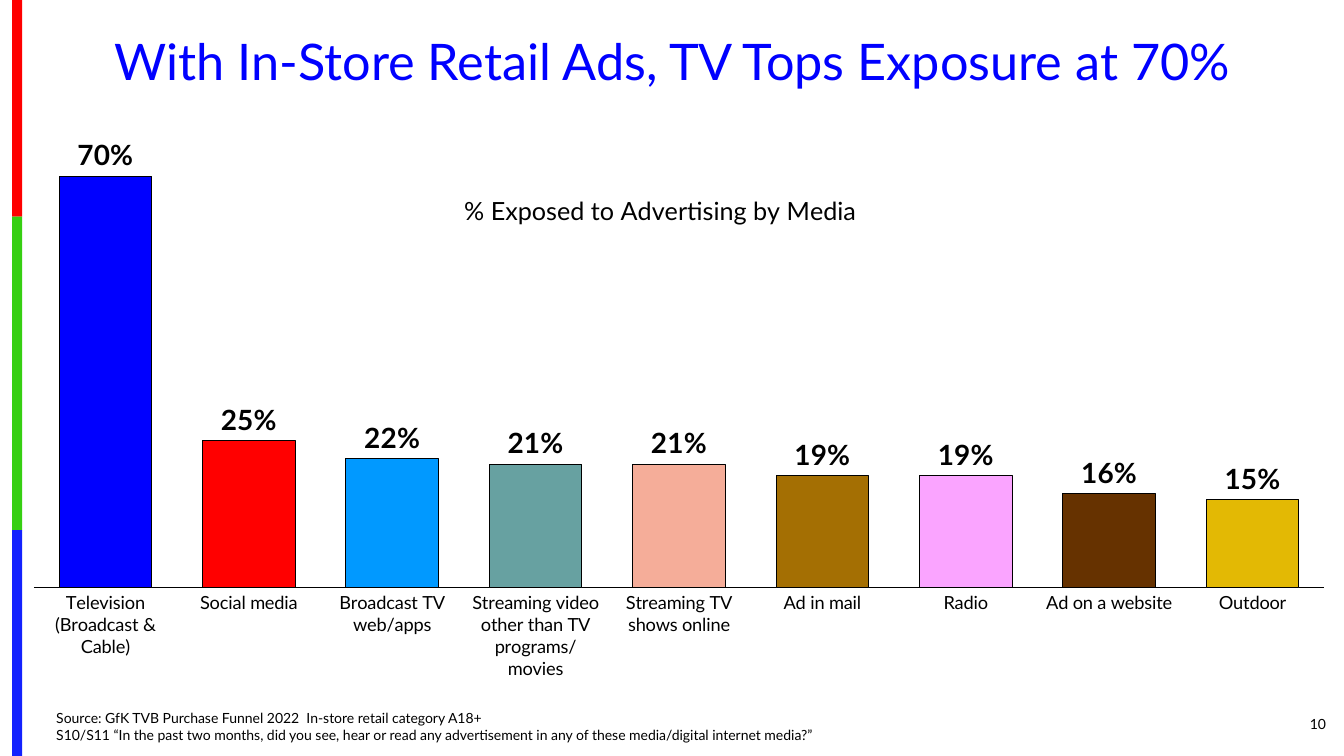
from lxml.etree import SubElement
from pptx import Presentation
from pptx.chart.data import CategoryChartData as Data
from pptx.dml.color import RGBColor as RGB
from pptx.enum.chart import XL_CHART_TYPE as Kind, XL_LABEL_POSITION as Pos, XL_TICK_MARK as Tick
from pptx.enum.shapes import MSO_SHAPE as Shape
from pptx.enum.text import MSO_ANCHOR as Anchor, PP_ALIGN as Align
from pptx.oxml import parse_xml
from pptx.oxml.ns import nsdecls, qn
from pptx.util import Inches, Pt

W, H = 13.33, 7.5
FONT = "Lato"
INK = {"text": "000000", "title": "0000FF", "red": "FE0000", "green": "36CF12", "blue": "1322FE"}
STRIPE = [("red", 2.15), ("green", 3.11), ("blue", 2.24)]
MEDIA = [
    ("Television (Broadcast & Cable)", 0.70, "0000FF"),
    ("Social media", 0.25, "FF0000"),
    ("Broadcast TV web/apps", 0.22, "0199FF"),
    ("Streaming video other than TV programs/movies", 0.21, "67A1A1"),
    ("Streaming TV shows online", 0.21, "F5AD99"),
    ("Ad in mail", 0.19, "A46F03"),
    ("Radio", 0.19, "FAA4FF"),
    ("Ad on a website", 0.16, "663200"),
    ("Outdoor", 0.15, "E3B904"),
]
SOURCE = (
    "Source: GfK TVB Purchase Funnel 2022  In-store retail category A18+\v"
    "S10/S11 “In the past two months, did you see, hear or read any "
    "advertisement in any of these media/digital internet media?”"
)


def style(font, size, color=INK["text"], bold=False):
    """Set the face, size, colour and weight of a font."""
    font.name, font.size, font.bold = FONT, Pt(size), bold
    font.color.rgb = RGB.from_string(color)


def write(slide, box, text, size=10, color=INK["text"], align=Align.LEFT, anchor=Anchor.MIDDLE, space=1.0):
    """Add one paragraph of text in a box."""
    frame = slide.shapes.add_textbox(*map(Inches, box)).text_frame
    frame.word_wrap, frame.vertical_anchor = True, anchor
    para = frame.paragraphs[0]
    para.text, para.alignment, para.line_spacing = text, align, space
    for run in para.runs:
        style(run.font, size, color)


def outline(line):
    """Give a line the thin black pen."""
    line.color.rgb = RGB.from_string(INK["text"])
    line.width = Pt(0.75)


def place(node, index, **share):
    """Fix a chart part at shares of the chart's size."""
    for old in node.findall(qn("c:layout")):
        node.remove(old)
    layout = parse_xml(f"<c:layout {nsdecls('c')}/>")
    manual = SubElement(layout, qn("c:manualLayout"))
    if "w" in share:
        SubElement(manual, qn("c:layoutTarget"), val="inner")
    for side in "xy":
        SubElement(manual, qn(f"c:{side}Mode"), val="edge")
    for name, val in share.items():
        SubElement(manual, qn(f"c:{name}"), val=str(val))
    node.insert(index, layout)


def stripe(slide, left, width):
    """Stack the colour bands down the left edge."""
    top = 0
    for name, high in STRIPE:
        band = slide.shapes.add_shape(Shape.RECTANGLE, *map(Inches, (left, top, width, high)))
        band.shadow.inherit = False
        band.fill.solid()
        band.fill.fore_color.rgb = RGB.from_string(INK[name])
        band.line.fill.background()
        top += high


def columns(slide, box):
    """Add the column chart of exposure by media."""
    names, vals, colors = zip(*MEDIA)
    data = Data(number_format="0%")
    data.categories = names
    data.add_series("Series 1", vals)
    chart = slide.shapes.add_chart(Kind.COLUMN_CLUSTERED, *map(Inches, box), data).chart
    style(chart.font, 10)
    chart.has_legend = False

    chart.has_title = True
    head = chart.chart_title
    head.text_frame.text = "% Exposed to Advertising by Media"
    style(head.text_frame.paragraphs[0].runs[0].font, 18)
    head.include_in_layout = False
    place(head._element, 1, x=0.33, y=0.15)
    place(chart._chartSpace.chart.plotArea, 0, x=0, y=0.027, w=1, h=0.82)

    base, scale = chart.category_axis, chart.value_axis
    base.major_tick_mark = base.minor_tick_mark = Tick.NONE
    style(base.tick_labels.font, 13)
    outline(base.format.line)
    scale.minimum_scale, scale.maximum_scale = 0, 0.8
    scale.has_major_gridlines = scale.visible = False

    plot = chart.plots[0]
    plot.gap_width, plot.overlap, plot.vary_by_categories = 55, -30, False
    plot.has_data_labels = True
    tags = plot.data_labels
    tags.show_value, tags.position = True, Pos.OUTSIDE_END
    tags.number_format, tags.number_format_is_linked = "0%", False
    style(tags.font, 20, bold=True)
    for i, color in enumerate(colors):
        bar = plot.series[0].points[i].format
        bar.fill.solid()
        bar.fill.fore_color.rgb = RGB.from_string(color)
        outline(bar.line)


def footer(slide, top):
    """Write the source note and the page number."""
    write(slide, (0.46, top, 10.63, 0.44), SOURCE, anchor=Anchor.BOTTOM)
    write(slide, (12.17, top, 1.08, 0.4), "10", align=Align.RIGHT)


def main():
    """Build and save the slide."""
    deck = Presentation()
    deck.slide_width, deck.slide_height = Inches(W), Inches(H)
    slide = deck.slides.add_slide(deck.slide_layouts[6])
    stripe(slide, 0.12, 0.1)
    write(slide, (0.46, 0.31, 12.42, 0.65), "With In-Store Retail Ads, TV Tops Exposure at 70%",
          size=36, color=INK["title"], align=Align.CENTER, space=0.9)
    columns(slide, (0.33, 1.01, 12.81, 5.73))
    footer(slide, 6.98)
    deck.save("out.pptx")


if __name__ == "__main__":
    main()
